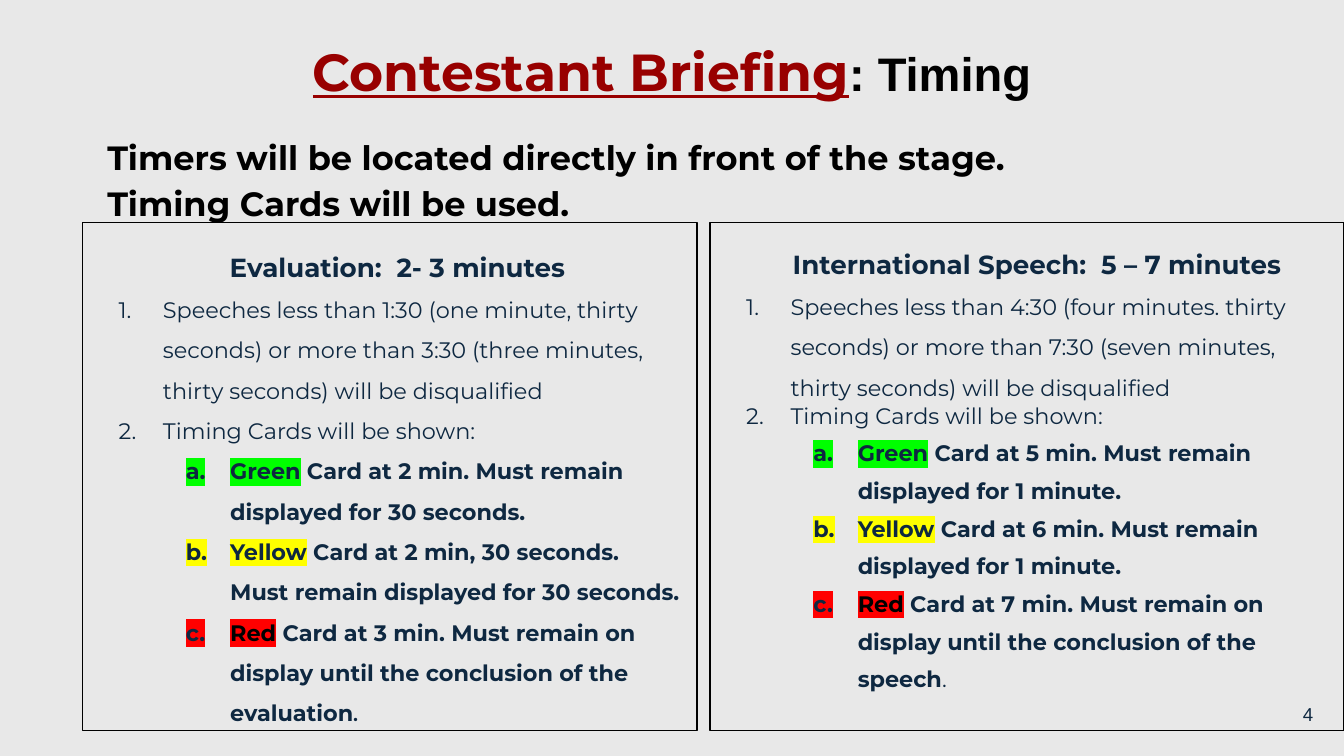
from dataclasses import dataclass
from typing import Optional

from lxml.etree import SubElement
from pptx import Presentation
from pptx.dml.color import RGBColor
from pptx.enum.shapes import MSO_SHAPE as Shape
from pptx.enum.text import MSO_ANCHOR as Anchor, PP_ALIGN as Align
from pptx.oxml.ns import qn
from pptx.util import Inches, Pt

# Widescreen slide on a grid of 100 columns by 100 rows
W = 10
H = W * 9 / 16
COL, ROW = W / 100, H / 100

NAVY, BLACK, MAROON, GREY = "0E2841", "000000", "980000", "E8E8E8"
GREEN, YELLOW, RED = "00FF00", "FFFF00", "FF0000"
NUMBERS, LETTERS = "arabicPeriod", "alphaLcPeriod"


@dataclass
class Run:
    text: str
    size: float = 12
    bold: bool = False
    color: str = NAVY
    font: str = "Montserrat"
    underline: bool = False
    highlight: Optional[str] = None
    new_line: bool = False


@dataclass
class Para:
    runs: list[Run]
    align: Align = Align.LEFT
    spacing: float = 1
    margin: float = 0
    numbering: Optional[str] = None


@dataclass
class Card:
    name: str
    color: str
    rule: str
    text_color: str = NAVY
    end: Optional[Run] = None


@dataclass
class Panel:
    left: float
    width: float
    heading: Para
    limits: str
    shown_spacing: float
    card_spacing: float
    cards: list[Card]


def rgb(value: str) -> RGBColor:
    return RGBColor.from_string(value)


def add_run(p, run: Run) -> None:
    if run.new_line:
        p.add_line_break()
    r = p.add_run()
    r.text = run.text
    f = r.font
    f.size, f.bold, f.name, f.underline = Pt(run.size), run.bold, run.font, run.underline
    f.color.rgb = rgb(run.color)
    if run.highlight:
        rpr = r._r.get_or_add_rPr()
        mark = SubElement(rpr, qn("a:highlight"))
        SubElement(mark, qn("a:srgbClr"), val=run.highlight)
        rpr.find(qn("a:solidFill")).addnext(mark)


def add_para(p, para: Para) -> None:
    p.alignment, p.line_spacing = para.align, para.spacing
    ppr = p._p.get_or_add_pPr()
    ppr.set("marL", str(Inches(para.margin)))
    ppr.set("indent", str(Inches(-0.33 if para.numbering else 0)))
    if para.numbering:
        p.level = 1 if para.numbering == LETTERS else 0
        SubElement(SubElement(ppr, qn("a:buClr")), qn("a:srgbClr"), val=NAVY)
        SubElement(ppr, qn("a:buAutoNum"), type=para.numbering)
    for run in para.runs:
        add_run(p, run)


def add_text(slide, left: float, top: float, width: float, height: float,
             paras: list[Para], inset: float = 0.1, anchor: Anchor = Anchor.TOP,
             framed: bool = False) -> None:
    """Place text in a box given in grid columns and rows."""
    box = (Inches(left * COL), Inches(top * ROW), Inches(width * COL), Inches(height * ROW))
    if framed:
        sp = slide.shapes.add_shape(Shape.RECTANGLE, *box)
        sp.shadow.inherit = False
        sp.fill.background()
        sp.line.color.rgb, sp.line.width = rgb(BLACK), Pt(0.75)
    else:
        sp = slide.shapes.add_textbox(*box)
    tf = sp.text_frame
    tf.word_wrap, tf.vertical_anchor = True, anchor
    tf.margin_left = tf.margin_right = Inches(0.1)
    tf.margin_top = tf.margin_bottom = Inches(inset)
    for i, para in enumerate(paras):
        add_para(tf.add_paragraph() if i else tf.paragraphs[0], para)


def add_panel(slide, panel: Panel) -> None:
    paras = [
        panel.heading,
        Para([Run(panel.limits)], spacing=1.5, margin=0.5, numbering=NUMBERS),
        Para([Run("Timing Cards will be shown:")], spacing=panel.shown_spacing,
             margin=0.5, numbering=NUMBERS),
    ]
    for card in panel.cards:
        runs = [Run(card.name, bold=True, color=card.text_color, highlight=card.color),
                Run(f" Card at {card.rule}", bold=True)]
        if card.end:
            runs.append(card.end)
        paras.append(Para(runs, spacing=panel.card_spacing, margin=1, numbering=LETTERS))
    add_text(slide, panel.left, 29.4, panel.width, 67.2, paras, framed=True)


def heading(text: str, spacing: float, margin: float) -> Para:
    return Para([Run(text, 14, True)], Align.CENTER, spacing, margin)


PANELS = [
    Panel(6.14, 45.73, heading("Evaluation:  2- 3 minutes ", 1.5, 0.17),
          "Speeches less than 1:30 (one minute, thirty seconds) or more than 3:30 "
          "(three minutes, thirty seconds) will be disqualified", 1.5, 1.5, [
              Card("Green", GREEN, "2 min. Must remain displayed for 30 seconds."),
              Card("Yellow", YELLOW,
                   "2 min, 30 seconds. Must remain displayed for 30 seconds."),
              Card("Red", RED, "3 min. Must remain on display until the conclusion "
                   "of the evaluation", BLACK, Run(".", 9.2, True))]),
    Panel(52.84, 47.16, heading("International Speech:  5 – 7 minutes", 1.4, 0.15),
          "Speeches less than 4:30 (four minutes. thirty seconds) or more than 7:30 "
          "(seven minutes, thirty seconds) will be disqualified", 1.05, 1.4, [
              Card("Green", GREEN, "5 min. Must remain displayed for 1 minute."),
              Card("Yellow", YELLOW, "6 min. Must remain displayed for 1 minute."),
              Card("Red", RED, "7 min. Must remain on display until the conclusion "
                   "of the speech", BLACK, Run("."))]),
]


def main() -> None:
    prs = Presentation()
    prs.slide_width, prs.slide_height = Inches(W), Inches(H)
    slide = prs.slides.add_slide(prs.slide_layouts[6])
    fill = slide.background.fill
    fill.solid()
    fill.fore_color.rgb = rgb(GREY)

    # Title
    add_text(slide, 3.4, 3.4, 93.2, 11.2, [Para([
        Run("Contestant Briefing", 27.9, True, MAROON, underline=True),
        Run(": Timing", 25.2, True, BLACK, "Arial")], Align.CENTER)])

    # Timing rules for each contest
    for panel in PANELS:
        add_panel(slide, panel)

    # Introduction
    add_text(slide, 5.3, 16.4, 88.6, 13.7, [Para([
        Run("Timers will be located directly in front of the stage. ", 18, True, BLACK),
        Run("Timing Cards will be used.", 18, True, BLACK, new_line=True)],
        spacing=1.15, margin=0.17)], inset=0.05)

    # Page number
    add_text(slide, 92.7, 90.7, 6, 7.6,
             [Para([Run("4", 10, font="Arial")], Align.RIGHT)], anchor=Anchor.MIDDLE)

    prs.save("out.pptx")


if __name__ == "__main__":
    main()
